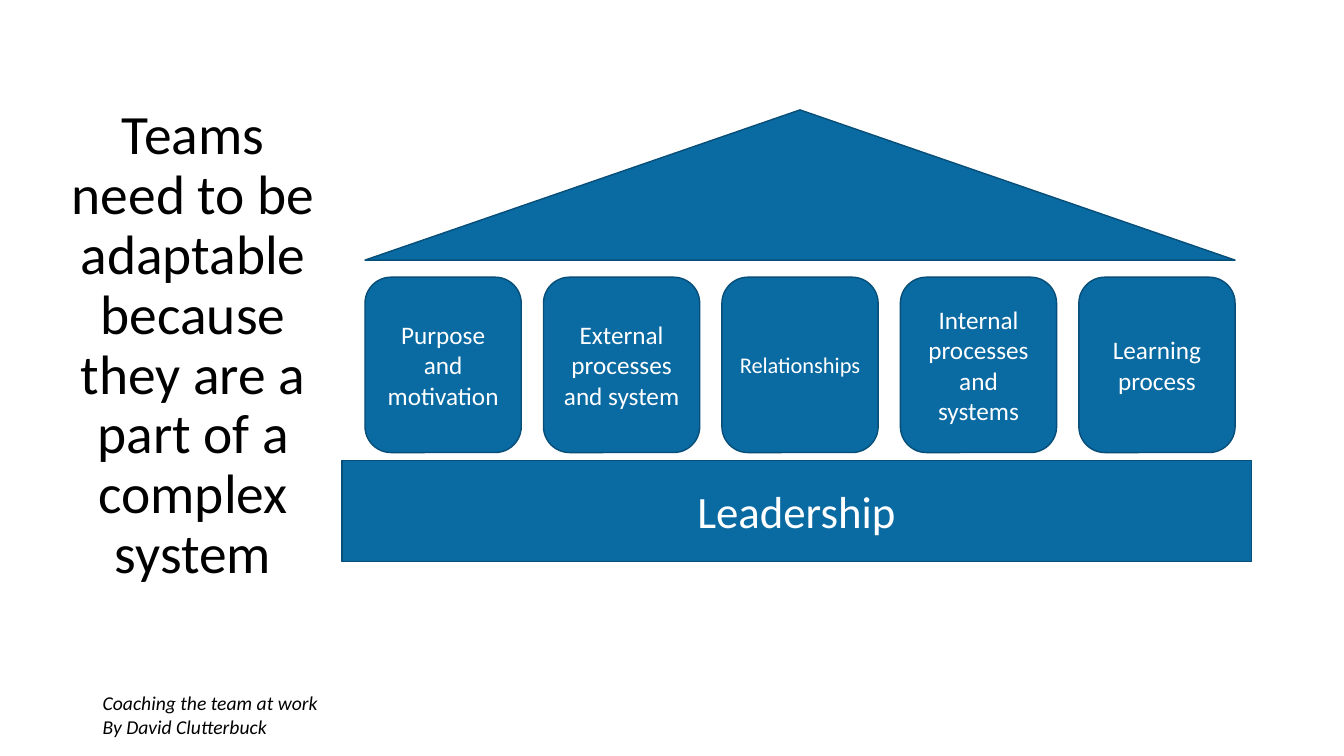
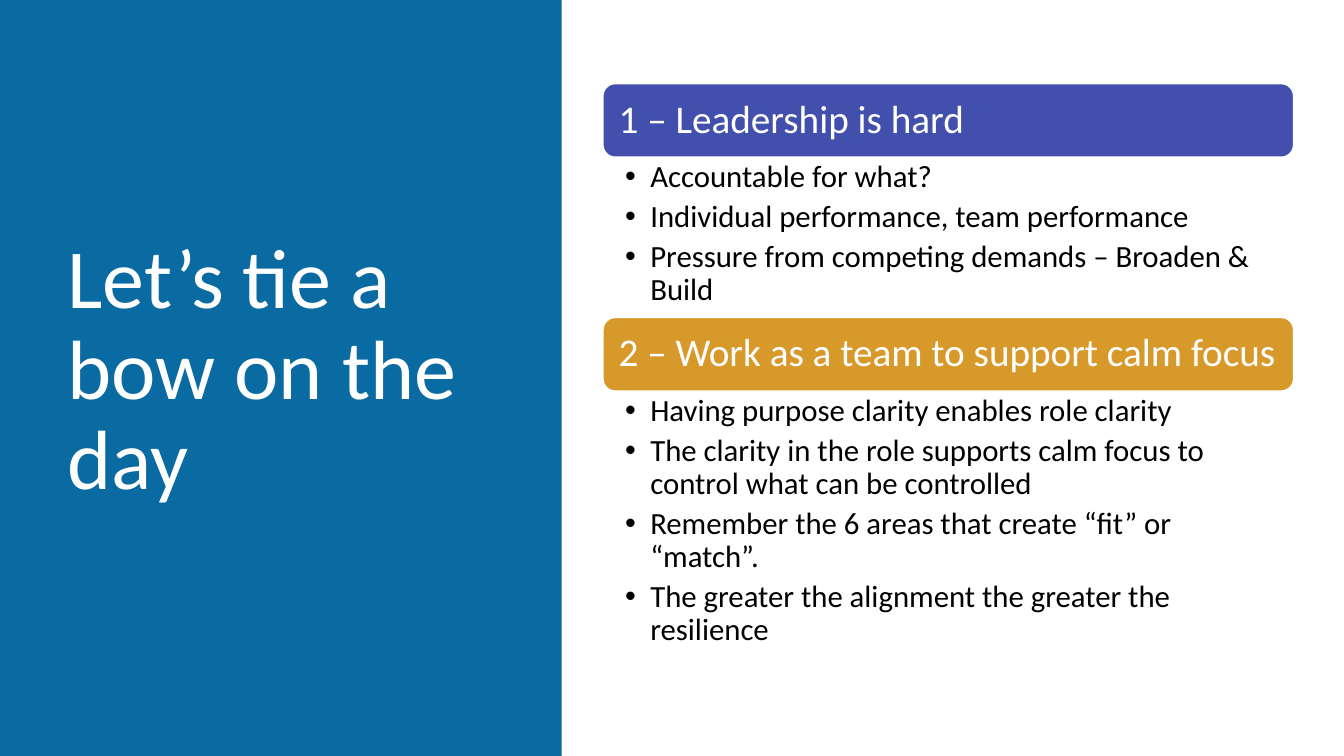
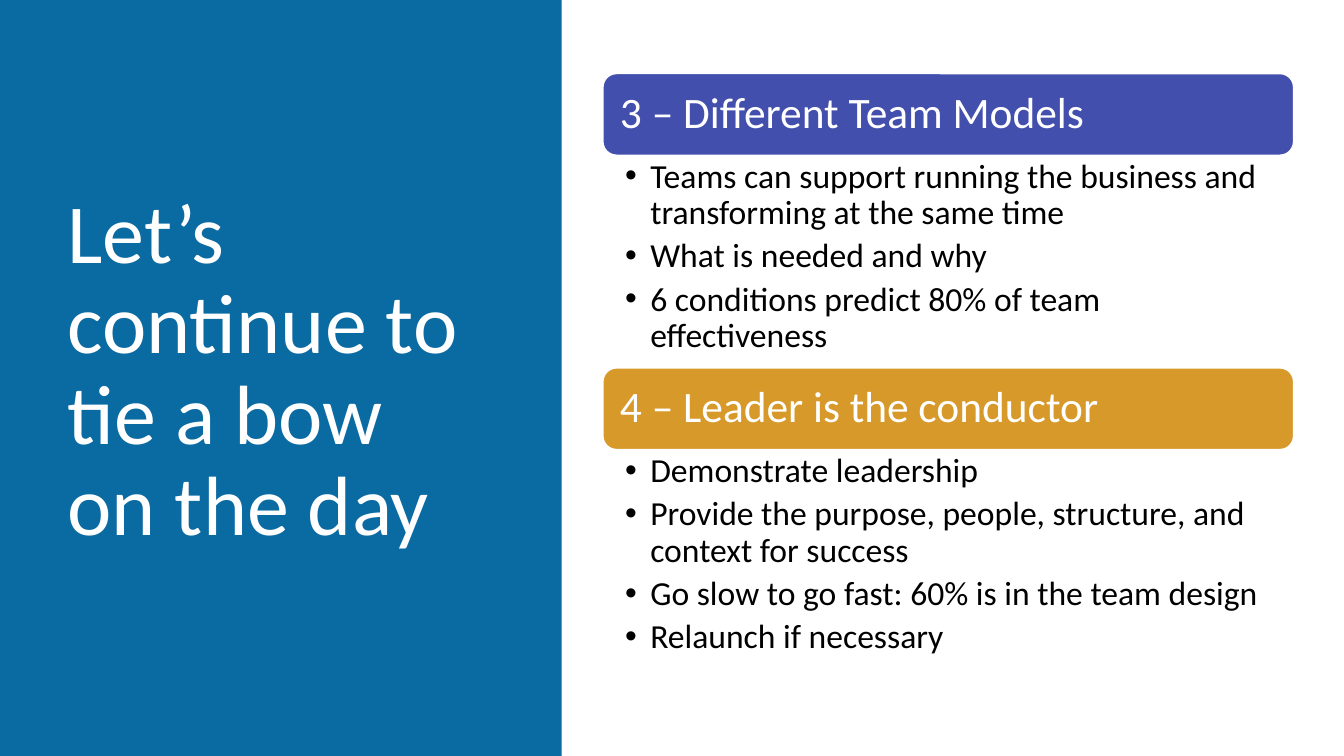
from pptx import Presentation
from pptx.dml.color import RGBColor
from pptx.enum.shapes import MSO_SHAPE
from pptx.enum.text import MSO_ANCHOR, MSO_AUTO_SIZE, PP_ALIGN
from pptx.oxml.ns import qn
from pptx.util import Emu, Pt
from lxml import etree

PX = 9144  # 100 px to the inch
SLIDE_W, SLIDE_H = 1333, 750
FONT = "Calibri"
COLORS = {
    "blue": "0A6AA2",
    "outline": "074E78",
    "indigo": "434FAD",
    "gold": "D7992A",
    "white": "FFFFFF",
    "black": "000000",
}
RECT = MSO_SHAPE.RECTANGLE
ROUND = MSO_SHAPE.ROUNDED_RECTANGLE
TRIANGLE = MSO_SHAPE.ISOSCELES_TRIANGLE
LEFT, CENTER = PP_ALIGN.LEFT, PP_ALIGN.CENTER
TOP, MIDDLE = MSO_ANCHOR.TOP, MSO_ANCHOR.MIDDLE
NO_FIT = MSO_AUTO_SIZE.NONE
TITLE_ONLY, TWO_CONTENT = 5, 3

PILLARS = [
    ("Purpose and motivation", 18),
    ("External processes and system", 18),
    ("Relationships", 16),
    ("Internal processes and systems", 18),
    ("Learning process", 18),
]
RECAPS = [
    {
        "title": "Let’s tie a bow on the day",
        "top": 83, "head_h": 73, "head_size": 28, "head_inset": 12,
        "list_size": 22, "list_right": 22,
        "sections": [
            ("1 – Leadership is hard", "indigo", 159, [
                "Accountable for what?",
                "Individual performance, team performance",
                "Pressure from competing demands – Broaden & Build",
            ]),
            ("2 – Work as a team to support calm focus", "gold", 266, [
                "Having purpose clarity enables role clarity",
                "The clarity in the role supports calm focus to control what can be controlled",
                "Remember the 6 areas that create “fit” or “match”.",
                "The greater the alignment the greater the resilience",
            ]),
        ],
    },
    {
        "title": "Let’s continue to tie a bow on the day",
        "top": 73, "head_h": 81, "head_size": 31, "head_inset": 13,
        "list_size": 24, "list_right": 24,
        "sections": [
            ("3 – Different Team Models", "indigo", 211, [
                "Teams can support running the business and transforming at the same time",
                "What is needed and why",
                "6 conditions predict 80% of team effectiveness",
            ]),
            ("4 – Leader is the conductor", "gold", 218, [
                "Demonstrate leadership",
                "Provide the purpose, people, structure, and context for success",
                "Go slow to go fast: 60% is in the team design",
                "Relaunch if necessary",
            ]),
        ],
    },
]


def rgb(name):
    return RGBColor.from_string(COLORS[name])


def emu(*lengths):
    return [Emu(n * PX) for n in lengths]


def place(sp, *box):
    sp.left, sp.top, sp.width, sp.height = emu(*box)


def format_frame(tf, insets=(10, 5, 10, 5), **values):
    """Set insets (left, top, right, bottom) and text frame attributes."""
    sides = ("margin_left", "margin_top", "margin_right", "margin_bottom")
    frame = {"word_wrap": True, "auto_size": NO_FIT, **dict(zip(sides, emu(*insets))), **values}
    for name, value in frame.items():
        setattr(tf, name, value)


def add_bullet(p):
    pPr = p._p.get_or_add_pPr()
    pPr.set("marL", str(25 * PX))
    pPr.set("indent", str(-25 * PX))
    etree.SubElement(pPr, qn("a:buFont")).set("typeface", "Arial")
    etree.SubElement(pPr, qn("a:buChar")).set("char", "•")


def write(tf, lines, size, color, italic=False, bullets=False, **para):
    """Fill a frame with one paragraph per line."""
    for i, line in enumerate(lines):
        p = tf.paragraphs[0] if i == 0 else tf.add_paragraph()
        if bullets:
            add_bullet(p)
        for name, value in para.items():
            setattr(p, name, value)
        r = p.add_run()
        r.text = line
        font = {"name": FONT, "size": Pt(size), "italic": italic}
        for name, value in font.items():
            setattr(r.font, name, value)
        r.font.color.rgb = rgb(color)


def add_block(slide, kind, box, fill, line=None):
    sp = slide.shapes.add_shape(kind, *emu(*box))
    sp.shadow.inherit = False
    sp.fill.solid()
    sp.fill.fore_color.rgb = rgb(fill)
    if line:
        sp.line.color.rgb = rgb(line)
        sp.line.width = Pt(1)
    else:
        sp.line.fill.background()
    return sp


def add_label(sp, text, size, align=CENTER, insets=(10, 5, 10, 5), **para):
    format_frame(sp.text_frame, insets, vertical_anchor=MIDDLE)
    write(sp.text_frame, [text], size, "white", alignment=align, **para)


def set_title(slide, text, box, size, color, align):
    sp = slide.shapes.title
    place(sp, *box)
    format_frame(sp.text_frame, vertical_anchor=MIDDLE)
    write(sp.text_frame, [text], size, color, alignment=align, line_spacing=0.9)


def set_list(sp, lines, box, size, right):
    place(sp, *box)
    format_frame(sp.text_frame, (22, 4, right, 4), vertical_anchor=TOP)
    write(sp.text_frame, lines, size, "black", bullets=True, alignment=LEFT,
          line_spacing=0.9, space_before=Pt(0), space_after=Pt(round(size * 0.21, 1)))


def add_temple_slide(prs):
    slide = prs.slides.add_slide(prs.slide_layouts[TITLE_ONLY])
    set_title(slide, "Teams need to be adaptable because they are a part of a complex system",
              (55, 93, 273, 501), 39.6, "black", CENTER)

    credit = slide.shapes.add_textbox(*emu(92, 681, 236, 57))
    format_frame(credit.text_frame, word_wrap=False)
    write(credit.text_frame, ["Coaching the team at work", "By David Clutterbuck"],
          14, "black", italic=True)

    left, width, step = 362, 155, 177
    roof_w = step * (len(PILLARS) - 1) + width
    add_block(slide, TRIANGLE, (left, 109, roof_w, 149), "blue", "outline")
    for i, (text, size) in enumerate(PILLARS):
        pillar = add_block(slide, ROUND, (left + i * step, 275, width, 174), "blue", "outline")
        add_label(pillar, text, size)
    base = add_block(slide, RECT, (339, 457, 902, 100), "blue", "outline")
    add_label(base, "Leadership", 32)


def add_recap_slide(prs, recap):
    slide = prs.slides.add_slide(prs.slide_layouts[TWO_CONTENT])
    band = add_block(slide, RECT, (0, 0, 557, SLIDE_H), "blue").element
    band.getparent().insert(2, band)  # behind the title
    set_title(slide, recap["title"], (57, 68, 416, 602), 60, "white", LEFT)

    left, width, y = 598, 685, recap["top"]
    head_h, inset = recap["head_h"], recap["head_inset"]
    for idx, (heading, color, list_h, lines) in enumerate(recap["sections"], 1):
        head = add_block(slide, ROUND, (left, y, width, head_h), color, "white")
        add_label(head, heading, recap["head_size"], LEFT, (inset, inset, 8, inset),
                  line_spacing=0.9)
        set_list(slide.placeholders[idx], lines, (left, y + head_h, width, list_h),
                 recap["list_size"], recap["list_right"])
        y += head_h + list_h


def main():
    prs = Presentation()
    prs.slide_width, prs.slide_height = emu(SLIDE_W, SLIDE_H)
    add_temple_slide(prs)
    for recap in RECAPS:
        add_recap_slide(prs, recap)
    prs.save("out.pptx")


if __name__ == "__main__":
    main()
